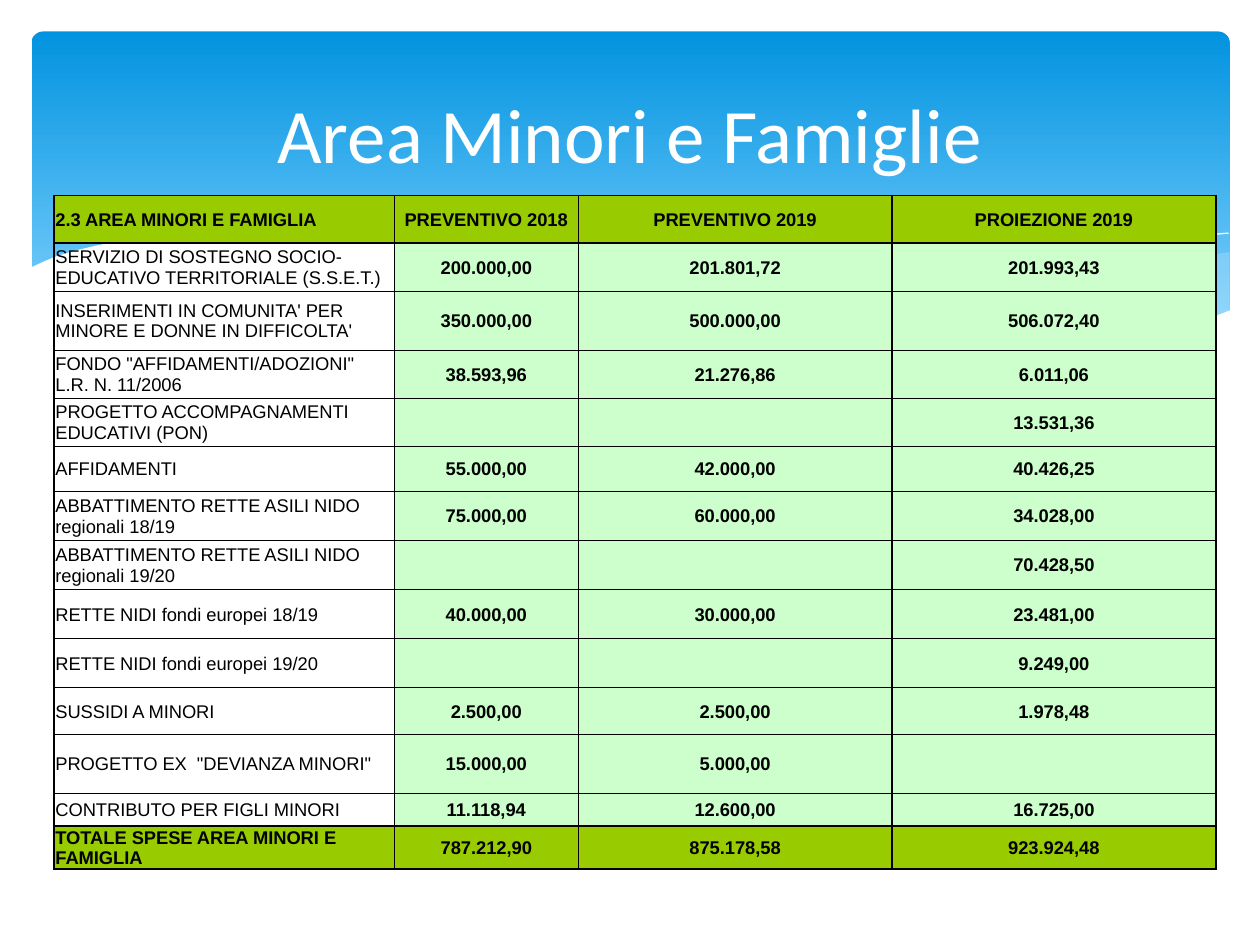
from lxml import etree
from pptx import Presentation
from pptx import util as u
from pptx.dml.color import RGBColor
from pptx.enum import shapes, text
from pptx.oxml import ns

COLUMN_WIDTHS = [2.7, 1.46, 1.28, 1.21, 2.57]
ROW_HEIGHTS = [0.38, 0.38, 0.47, 0.38, 0.38, 0.36, 0.39, 0.39, 0.39, 0.39, 0.37, 0.47, 0.26, 0.34]
BUDGET = [
    ("2.3 AREA MINORI E FAMIGLIA", "PREVENTIVO 2018", "PREVENTIVO 2019", "PROIEZIONE 2019"),
    ("SERVIZIO DI SOSTEGNO SOCIO-EDUCATIVO TERRITORIALE (S.S.E.T.)",
     "200.000,00", "201.801,72", "201.993,43"),
    ("INSERIMENTI IN COMUNITA' PER MINORE E DONNE IN DIFFICOLTA'",
     "350.000,00", "500.000,00", "506.072,40"),
    ('FONDO "AFFIDAMENTI/ADOZIONI" L.R. N. 11/2006', "38.593,96", "21.276,86", "6.011,06"),
    ("PROGETTO ACCOMPAGNAMENTI EDUCATIVI (PON)", "", "", "13.531,36"),
    ("AFFIDAMENTI", "55.000,00", "42.000,00", "40.426,25"),
    ("ABBATTIMENTO RETTE ASILI NIDO regionali 18/19", "75.000,00", "60.000,00", "34.028,00"),
    ("ABBATTIMENTO RETTE ASILI NIDO regionali 19/20", "", "", "70.428,50"),
    ("RETTE NIDI fondi europei 18/19", "40.000,00", "30.000,00", "23.481,00"),
    ("RETTE NIDI fondi europei 19/20", "", "", "9.249,00"),
    ("SUSSIDI A MINORI", "2.500,00", "2.500,00", "1.978,48"),
    ('PROGETTO EX  "DEVIANZA MINORI"', "15.000,00", "5.000,00", ""),
    ("CONTRIBUTO PER FIGLI MINORI", "11.118,94", "12.600,00", "16.725,00"),
    ("TOTALE SPESE AREA MINORI E FAMIGLIA", "787.212,90", "875.178,58", "923.924,48"),
]

RIGHT_WAVE = [
    (9.76, 2), (9.48, 2.04), (9.21, 2.1), (8.91, 2.16), (8.61, 2.23), (8.05, 2.37),
    (7.53, 2.48), (7.06, 2.57), (6.61, 2.65), (6.91, 2.69), (7.19, 2.72), (7.45, 2.75),
    (7.69, 2.77), (8.03, 2.78), (8.35, 2.77), (8.63, 2.75), (8.89, 2.72), (9.13, 2.67),
    (9.35, 2.62), (9.63, 2.52), (9.76, 2.47)]
MIDDLE_WAVE = [
    (8.93, 2.73), (8.66, 2.69), (8.07, 2.6), (7.41, 2.47), (6.68, 2.31), (6.29, 2.22),
    (5.98, 2.14), (5.69, 2.08), (5.41, 2.03), (5.14, 1.98), (4.89, 1.94), (4.42, 1.89),
    (3.99, 1.86), (3.61, 1.85), (3.28, 1.87), (2.86, 1.91), (3.23, 1.96), (3.62, 2.03),
    (4.04, 2.11), (4.49, 2.22), (4.91, 2.32), (5.3, 2.4), (5.66, 2.48), (6.01, 2.55),
    (6.34, 2.61), (6.65, 2.66), (6.95, 2.7), (7.22, 2.74), (7.48, 2.76), (7.73, 2.77),
    (8.07, 2.78), (8.38, 2.78), (8.67, 2.76), (8.84, 2.74)]
LONG_CURVE = [
    (3.09, 1.95), (3.28, 1.92), (3.53, 1.89), (3.87, 1.87), (4.33, 1.87), (4.69, 1.89),
    (5.1, 1.92), (5.56, 1.97), (6.08, 2.04), (6.65, 2.13), (7.27, 2.26), (7.95, 2.41),
    (8.69, 2.61), (9.07, 2.72)]
RIGHT_CURVE = [
    (6.13, 2.57), (6.53, 2.46), (6.95, 2.35), (7.48, 2.23), (8.06, 2.1), (8.66, 1.99),
    (8.95, 1.94), (9.24, 1.9), (9.51, 1.87), (9.75, 1.85)]
WHITE_WAVE = [
    (9.77, 2.46), (9.59, 2.53), (9.4, 2.59), (9.2, 2.65), (8.99, 2.69), (8.75, 2.73),
    (8.5, 2.75), (8.23, 2.77), (7.93, 2.76), (7.61, 2.75), (7.26, 2.72), (6.88, 2.68),
    (6.48, 2.62), (6.03, 2.54), (5.55, 2.45), (5.03, 2.33), (4.47, 2.2), (3.91, 2.07),
    (3.4, 1.97), (2.92, 1.9), (2.5, 1.86), (2.11, 1.84), (1.77, 1.84), (1.46, 1.85),
    (1.19, 1.87), (0.95, 1.91), (0.76, 1.95), (0.59, 1.99), (0.46, 2.03), (0.36, 2.07),
    (0.23, 2.13), (0.23, 3.29), (9.77, 3.29)]


def color(value):
    return RGBColor.from_string(value)


def assign(target, values):
    for name, value in values.items():
        setattr(target, name, value)


class BudgetPage:
    """Holds the style and the current slide."""

    TITLE = {"size": u.Pt(44), "name": "Calibri", "bold": False}
    CELL = {"size": u.Pt(10.5), "name": "Arial"}
    CELL_BOX = {"margin_left": u.Inches(0.01), "margin_right": u.Inches(0.01),
                "margin_top": u.Inches(0.01), "margin_bottom": 0,
                "vertical_anchor": text.MSO_ANCHOR.MIDDLE}
    WHITE, BLACK, GREEN, MINT, SKY = "FFFFFF", "000000", "99CC00", "CCFFCC", "C6E7FC"
    PLAIN_TABLE = "{2D5ABB26-0587-4C30-8999-92F81FD0307C}"

    def __init__(self, deck):
        self.page = deck.slides.add_slide(deck.slide_layouts[5])

    def add_text(self, para, words, style, ink, align):
        para.alignment = align
        span = para.add_run()
        span.text = words
        assign(span.font, style)
        span.font.color.rgb = color(ink)

    def title(self, words, *place):
        box = self.page.shapes.title
        assign(box, dict(zip(("left", "top", "width", "height"), place)))
        box.text_frame.vertical_anchor = text.MSO_ANCHOR.MIDDLE
        self.add_text(box.text_frame.paragraphs[0], words, self.TITLE, self.WHITE,
                      text.PP_ALIGN.CENTER)
        self.page.shapes._spTree.append(box._element)

    def banner(self, *place):
        box = self.page.shapes.add_shape(shapes.MSO_SHAPE.ROUNDED_RECTANGLE, *place)
        box.adjustments[0] = 0.034
        box.shadow.inherit = False
        box.line.fill.background()
        box.fill.gradient()
        box.fill.gradient_angle = 270
        for stop, (position, value) in zip(box.fill.gradient_stops, [(0, "0293E0"), (0.9, "83D3FE")]):
            stop.position = position
            stop.color.rgb = color(value)

    def outline(self, points, close):
        start, *rest = [(u.Inches(x), u.Inches(y)) for x, y in points]
        builder = self.page.shapes.build_freeform(*start)
        builder.add_line_segments(rest, close=close)
        shape = builder.convert_to_shape()
        shape.shadow.inherit = False
        return shape

    def wave(self, points, value, opacity=100):
        shape = self.outline(points, True)
        shape.line.fill.background()
        shape.fill.solid()
        shape.fill.fore_color.rgb = color(value)
        if opacity < 100:
            tint = shape._element.spPr.find(".//" + ns.qn("a:srgbClr"))
            etree.SubElement(tint, ns.qn("a:alpha"), val=str(opacity * 1000))

    def curve(self, points):
        shape = self.outline(points, False)
        shape.fill.background()
        shape.line.color.rgb = color(self.WHITE)
        shape.line.width = u.Pt(0)

    def borders(self, cell, widths):
        properties = cell._tc.get_or_add_tcPr()
        for index, (side, width) in enumerate(widths.items()):
            line = etree.Element(ns.qn("a:ln" + side), w=str(u.Pt(width)))
            if width:
                fill = etree.SubElement(line, ns.qn("a:solidFill"))
                etree.SubElement(fill, ns.qn("a:srgbClr"), val=self.BLACK)
            else:
                etree.SubElement(line, ns.qn("a:noFill"))
            properties.insert(index, line)

    def table(self, rows, left, top):
        last = len(rows) - 1
        frame = self.page.shapes.add_table(len(rows), len(COLUMN_WIDTHS), left, top,
                                           u.Inches(sum(COLUMN_WIDTHS)), u.Inches(sum(ROW_HEIGHTS)))
        grid = frame.table
        assign(grid, {"first_row": False, "horz_banding": False})
        grid._tbl.tblPr.find(ns.qn("a:tableStyleId")).text = self.PLAIN_TABLE
        for column, width in zip(grid.columns, COLUMN_WIDTHS):
            column.width = u.Inches(width)
        for row, height in zip(grid.rows, ROW_HEIGHTS):
            row.height = u.Inches(height)
        for r, (label, first, second, projection) in enumerate(rows):
            strong = r in (0, last)
            for c, words in enumerate((label, first, second, "", projection)):
                cell = grid.cell(r, c)
                assign(cell, self.CELL_BOX)
                if strong or c:
                    cell.fill.solid()
                    cell.fill.fore_color.rgb = color(self.GREEN if strong else self.MINT)
                else:
                    cell.fill.background()
                self.borders(cell, {"L": 0 if c == 3 else 1, "R": 0 if c == 2 and not words else 1,
                                    "T": 1 if r in (0, 1, last) else 0.5,
                                    "B": 1 if r in (0, last - 1, last) else 0.5})
                if words:
                    align = text.PP_ALIGN.CENTER if c else text.PP_ALIGN.LEFT
                    style = {**self.CELL, "bold": bool(strong or c)}
                    self.add_text(cell.text_frame.paragraphs[0], words, style, self.BLACK, align)
            if second:
                grid.cell(r, 2).merge(grid.cell(r, 3))


def main():
    deck = Presentation()
    assign(deck, {"slide_width": u.Inches(10), "slide_height": u.Inches(7.5)})
    page = BudgetPage(deck)
    page.banner(u.Inches(0.25), u.Inches(0.25), u.Inches(9.51), u.Inches(2.7))
    page.wave(RIGHT_WAVE, page.SKY, 29)
    page.wave(MIDDLE_WAVE, page.SKY, 40)
    page.curve(LONG_CURVE)
    page.curve(RIGHT_CURVE)
    page.wave(WHITE_WAVE, page.WHITE)
    page.table(BUDGET, u.Inches(0.43), u.Inches(1.55))
    page.title("Area Minori e Famiglie", u.Inches(0.5), u.Inches(0.37), u.Inches(9), u.Inches(1.37))
    deck.save("out.pptx")


if __name__ == "__main__":
    main()
